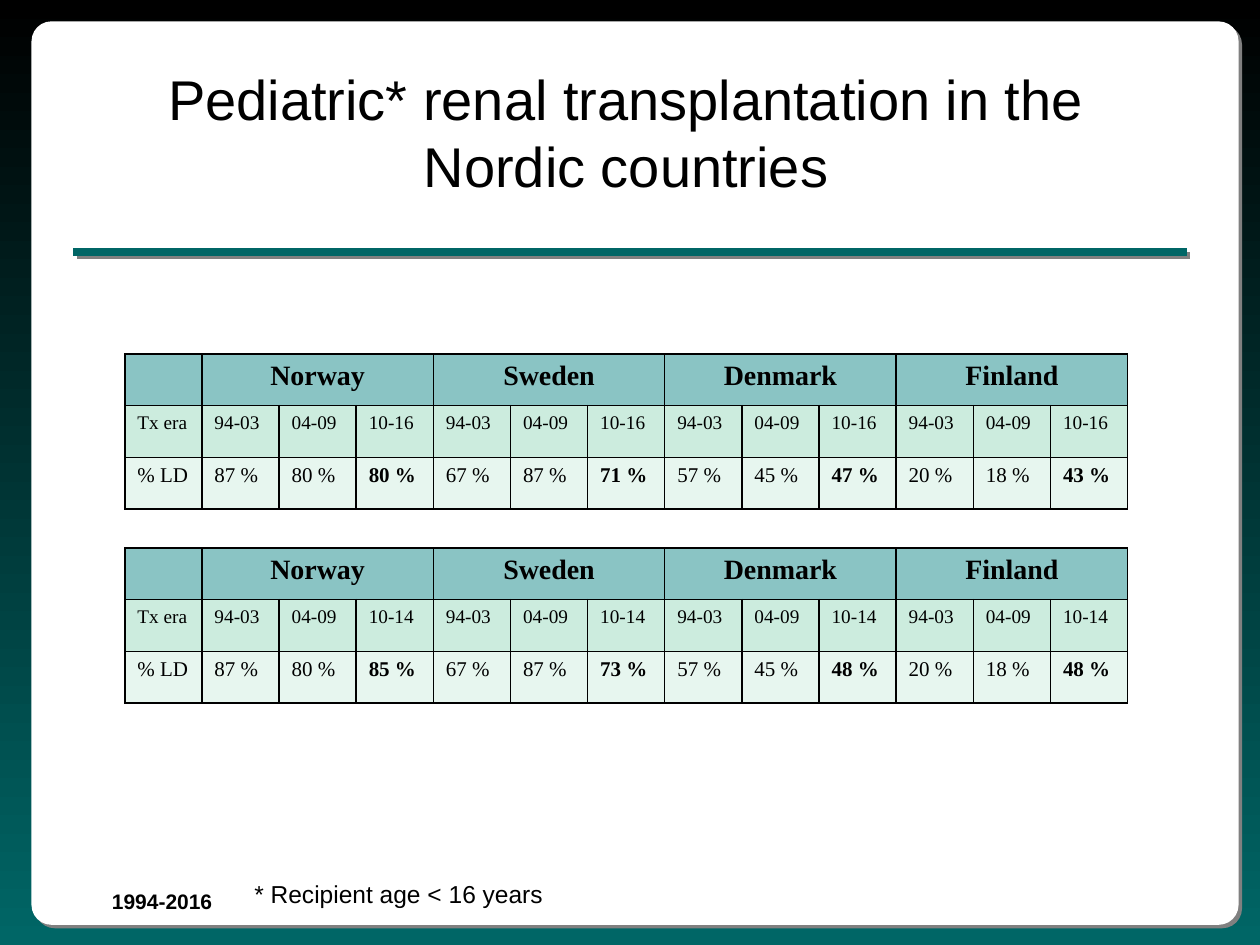
from lxml import etree
from pptx import Presentation
from pptx.dml.color import RGBColor
from pptx.enum.shapes import MSO_CONNECTOR as Connector, MSO_SHAPE as Shape
from pptx.enum.text import MSO_ANCHOR as Anchor, MSO_AUTO_SIZE as AutoSize, PP_ALIGN as Align
from pptx.oxml import parse_xml
from pptx.oxml.ns import nsdecls, qn
from pptx.util import Inches, Pt


def color(value):
    return RGBColor.from_string(value)


def write(frame, text, size, font="Arial", bold=False, align=Align.LEFT):
    para = frame.paragraphs[0]
    para.alignment = align
    span = para.add_run()
    span.text = text
    span.font.size = Pt(size)
    span.font.name = font
    span.font.bold = bold
    span.font.color.rgb = color("000000")


deck = Presentation()
deck.slide_width, deck.slide_height = Inches(10), Inches(7.5)
slide = deck.slides.add_slide(deck.slide_layouts[5])
shapes = slide.shapes
title = shapes.title

background = slide.background.fill
background.gradient()
background.gradient_angle = 270
for stop, position, value in zip(background.gradient_stops, (0, 1), ("000000", "006666")):
    stop.position = position
    stop.color.rgb = color(value)

panel = shapes.add_shape(Shape.ROUNDED_RECTANGLE, Inches(0.25), Inches(0.17), Inches(9.58), Inches(7.17))
panel.adjustments[0] = 0.022
panel.fill.solid()
panel.fill.fore_color.rgb = color("FFFFFF")
panel.line.fill.background()

rule = shapes.add_connector(Connector.STRAIGHT, Inches(0.58), Inches(2), Inches(9.42), Inches(2))
rule.line.color.rgb = color("006666")
rule.line.width = Pt(4.5)

for shape in (panel, rule):
    shape.element.spPr.append(parse_xml(
        f'<a:effectLst {nsdecls("a")}><a:outerShdw dist="{Pt(2.8)}" dir="2700000" algn="ctr" rotWithShape="0">'
        '<a:srgbClr val="808080"/></a:outerShdw></a:effectLst>'))
    title.element.addprevious(shape.element)

title.left, title.top, title.width, title.height = Inches(1.19), Inches(0.42), Inches(7.56), Inches(1.25)
title.text_frame.vertical_anchor = Anchor.MIDDLE
title.text_frame.word_wrap = True
title.text_frame.auto_size = AutoSize.NONE
write(title.text_frame, "Pediatric* renal transplantation in the Nordic countries", 32, align=Align.CENTER)

countries = ["Norway", "Sweden", "Denmark", "Finland"]
early_shares = [(87, 80), (67, 87), (57, 45), (20, 18)]
tables = [
    (2.81, "10-16", [80, 71, 47, 43]),
    (4.35, "10-14", [85, 73, 48, 48]),
]
row_fills = ["008080", "CCECDE", "E7F6EF"]
serif = "Times New Roman"

for top, last_era, last_shares in tables:
    table = shapes.add_table(3, 13, Inches(0.99), Inches(top), Inches(7.96), Inches(1.22)).table
    table.first_row = table.horz_banding = False
    for column in table.columns:
        column.width = Inches(7.96 / 13)
    for row, fill in zip(table.rows, row_fills):
        row.height = Inches(0.41)
        for cell in row.cells:
            cell.fill.solid()
            cell.fill.fore_color.rgb = color(fill)
            properties = cell._tc.get_or_add_tcPr()
            if fill == row_fills[0]:
                etree.SubElement(properties.find(".//" + qn("a:srgbClr")), qn("a:alpha"), val="46000")
            for index, side in enumerate(("lnL", "lnR", "lnT", "lnB")):
                properties.insert(index, parse_xml(
                    f'<a:{side} {nsdecls("a")} w="{Pt(1)}"><a:solidFill><a:srgbClr val="000000"/>'
                    f'</a:solidFill></a:{side}>'))

    write(table.cell(1, 0).text_frame, "Tx era", 11, serif)
    write(table.cell(2, 0).text_frame, "% LD", 12, serif)
    for group, country in enumerate(countries):
        first = 1 + 3 * group
        header = table.cell(0, first)
        header.merge(table.cell(0, first + 2))
        write(header.text_frame, country, 16, serif, bold=True, align=Align.CENTER)
        shares = [*early_shares[group], last_shares[group]]
        for offset, (era, share) in enumerate(zip(("94-03", "04-09", last_era), shares)):
            write(table.cell(1, first + offset).text_frame, era, 11, serif)
            write(table.cell(2, first + offset).text_frame, f"{share} %", 12, serif, bold=offset == 2)

notes = [
    ("1994-2016", 0.79, 7, 1.47, 0.3, 12, True),
    ("* Recipient age < 16 years", 1.92, 6.93, 2.5, 0.34, 14, False),
]
for text, left, top, width, height, size, bold in notes:
    box = shapes.add_textbox(Inches(left), Inches(top), Inches(width), Inches(height))
    box.text_frame.word_wrap = bold
    box.text_frame.auto_size = AutoSize.SHAPE_TO_FIT_TEXT
    write(box.text_frame, text, size, bold=bold)

deck.save("out.pptx")
